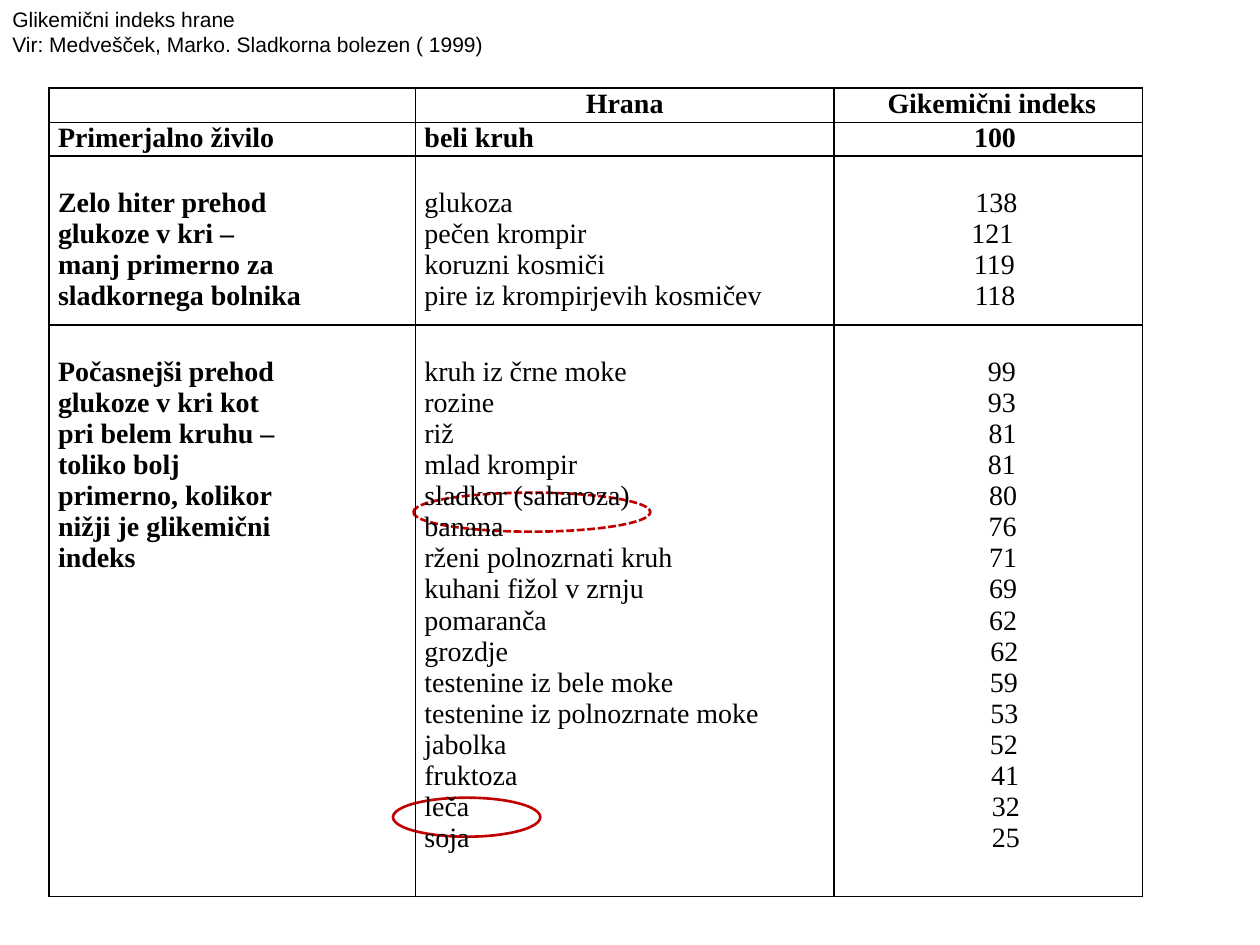
"""Build the slide with the table of glycemic indices of foods."""
import lxml.etree
import pptx
import pptx.dml.color
import pptx.enum.dml
import pptx.enum.shapes
import pptx.enum.text
import pptx.oxml.ns
import pptx.util

Pt = pptx.util.Pt
ALIGN = pptx.enum.text.PP_ALIGN
COLORS = {"ink": "000000", "paper": "FFFFFF", "mark": "C00000"}


def rgb(name):
    return pptx.dml.color.RGBColor.from_string(COLORS[name])


def write(paragraph, text, font, size, bold=False, align=ALIGN.JUSTIFY):
    paragraph.alignment = align
    run = paragraph.add_run()
    run.text = text
    run.font.name = font
    run.font.size = Pt(size)
    run.font.bold = bold
    run.font.color.rgb = rgb("ink")


deck = pptx.Presentation()
deck.slide_width, deck.slide_height = Pt(720), Pt(540)
slide = deck.slides.add_slide(deck.slide_layouts[6])

highlights = [
    (224.6, 455.8, 84.2, pptx.enum.dml.MSO_LINE.SOLID),
    (236.2, 281.5, 135.4, pptx.enum.dml.MSO_LINE.SQUARE_DOT),
]
for left, top, width, dash in highlights:
    ring = slide.shapes.add_shape(
        pptx.enum.shapes.MSO_SHAPE.OVAL, Pt(left), Pt(top), Pt(width), Pt(22.3))
    ring.shadow.inherit = False
    ring.fill.solid()
    ring.fill.fore_color.rgb = rgb("paper")
    ring.line.color.rgb = rgb("mark")
    ring.line.width = Pt(1.5)
    ring.line.dash_style = dash

fast_foods = [
    ("glukoza", "138", 9.4), ("pečen krompir", "121", 5),
    ("koruzni kosmiči", "119", 7.2), ("pire iz krompirjevih kosmičev", "118", 7.9),
]
slow_foods = [
    ("kruh iz črne moke", "99", 15.8), ("rozine", "93", 15.8),
    ("riž", "81", 16.6), ("mlad krompir", "81", 15.8),
    ("sladkor (saharoza)", "80", 17.3), ("banana", "76", 16.6),
    ("rženi polnozrnati kruh", "71", 17.3), ("kuhani fižol v zrnju", "69", 17.3),
    ("pomaranča", "62", 17.3), ("grozdje", "62", 18.7),
    ("testenine iz bele moke", "59", 18), ("testenine iz polnozrnate moke", "53", 18.7),
    ("jabolka", "52", 18), ("fruktoza", "41", 19.4),
    ("leča", "32", 20.2), ("soja", "25", 20.2),
]
fast_label = ["Zelo hiter prehod", "glukoze v kri –", "manj primerno za",
              "sladkornega bolnika"]
slow_label = ["Počasnejši prehod", "glukoze v kri kot", "pri belem kruhu –",
              "toliko bolj", "primerno, kolikor", "nižji je glikemični", "indeks"]
groups = [
    ([], [("Hrana", "Gikemični indeks", 4.3)], 19.3),
    (["Primerjalno živilo"], [("beli kruh", "100", 7.9)], 19.3),
    (fast_label, fast_foods, 96.6),
    (slow_label, slow_foods, 326.4),
]
column_widths = [209.4, 239, 176.3]

index_table = slide.shapes.add_table(
    len(groups), 3, Pt(28.1), Pt(50.4), Pt(sum(column_widths)),
    Pt(sum(height for *_, height in groups))).table
index_table.first_row = index_table.horz_banding = False
for column, width in zip(index_table.columns, column_widths):
    column.width = Pt(width)

for number, (label, foods, height) in enumerate(groups):
    index_table.rows[number].height = Pt(height)
    contents = [
        [(line, 0) for line in label],
        [(food, 0) for food, _, _ in foods],
        [(value, indent) for _, value, indent in foods],
    ]
    for position, lines in enumerate(contents):
        cell = index_table.cell(number, position)
        cell.margin_left = cell.margin_right = Pt(5.1)
        cell.margin_top = Pt(17.7 if number > 1 else 0)
        cell.margin_bottom = 0
        centred = position == 2 or number == 0
        for order, (text, indent) in enumerate(lines):
            frame = cell.text_frame
            paragraph = frame.add_paragraph() if order else frame.paragraphs[0]
            write(paragraph, text, "Times New Roman", 16,
                  bold=position == 0 or number < 2,
                  align=ALIGN.CENTER if centred else ALIGN.JUSTIFY)
            if indent:
                paragraph._p.get_or_add_pPr().set("marL", str(Pt(indent)))
        if not lines:
            cell.text_frame.paragraphs[0].font.size = Pt(16)
        properties = cell._tc.get_or_add_tcPr()
        for side in ("lnL", "lnR", "lnT", "lnB"):
            border = lxml.etree.SubElement(
                properties, pptx.oxml.ns.qn("a:" + side), w=str(Pt(1)))
            paint = lxml.etree.SubElement(border, pptx.oxml.ns.qn("a:solidFill"))
            lxml.etree.SubElement(
                paint, pptx.oxml.ns.qn("a:srgbClr"), val=COLORS["ink"])
        cell.fill.background()

heading = slide.shapes.add_textbox(0, 0, Pt(720), Pt(36)).text_frame
heading.word_wrap = False
heading.auto_size = pptx.enum.text.MSO_AUTO_SIZE.SHAPE_TO_FIT_TEXT
heading.vertical_anchor = pptx.enum.text.MSO_ANCHOR.MIDDLE
write(heading.paragraphs[0], "Glikemični indeks hrane", "Arial", 12)
write(heading.add_paragraph(),
      "Vir: Medvešček, Marko. Sladkorna bolezen ( 1999)", "Arial", 12)

deck.save("out.pptx")
